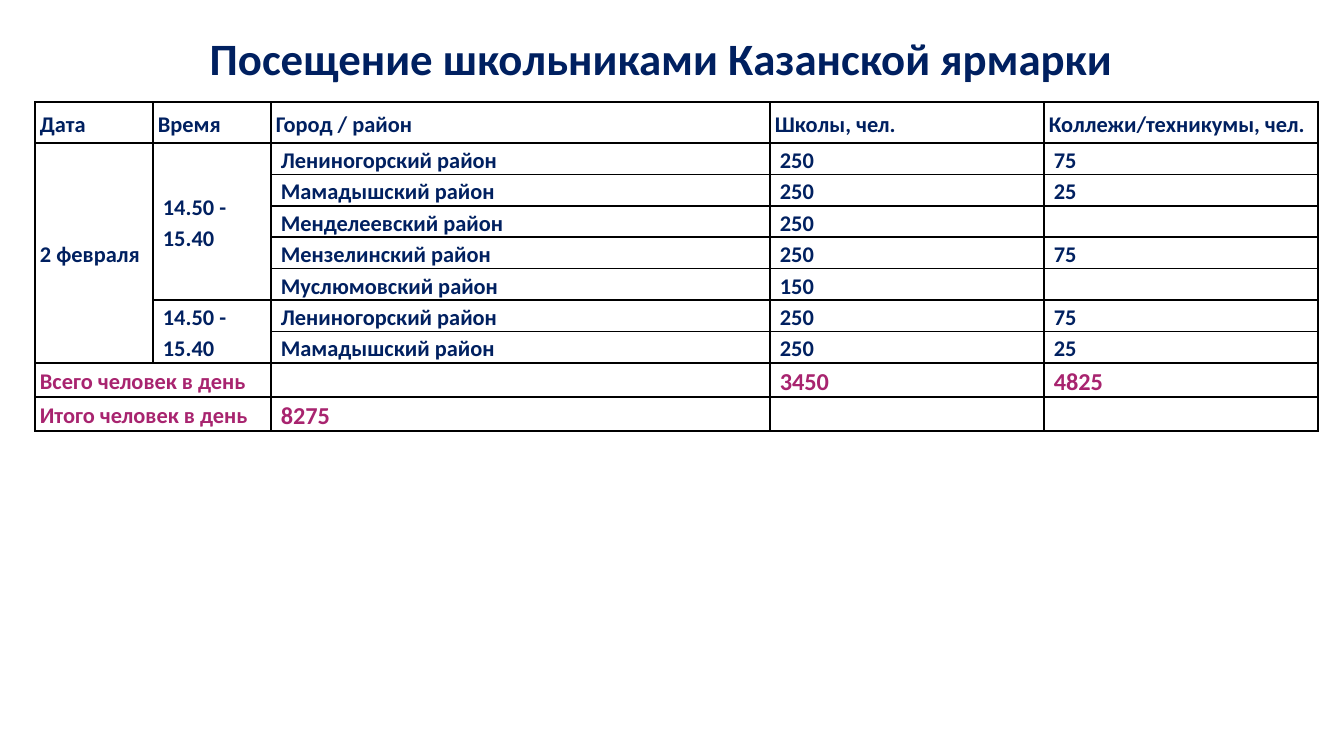
"""Builds the slide with the school visit schedule of the Kazan fair."""
from dataclasses import dataclass

from lxml.etree import SubElement
from pptx import Presentation
from pptx.dml.color import RGBColor
from pptx.enum.text import MSO_ANCHOR, MSO_AUTO_SIZE, PP_ALIGN
from pptx.oxml.ns import qn
from pptx.util import Emu, Pt


@dataclass(frozen=True)
class Theme:
    font: str = "Calibri"
    navy: str = "002060"
    magenta: str = "A8246F"
    white: str = "FFFFFF"
    border: str = "000000"
    title_size: int = 24
    body_size: int = 12
    total_size: int = 13


THEME = Theme()
COLUMNS = [118, 118, 499, 274, 274]
ROW_HEIGHTS = [41] + [31] * 7 + [34] * 2
HEADER = ["Дата", "Время", "Город / район", "Школы, чел.", "Коллежи/техникумы, чел."]
DATE = "2 февраля"
SESSIONS = [
    ("14.50 - 15.40", [
        ("Лениногорский район", "250", "75"),
        ("Мамадышский район", "250", "25"),
        ("Менделеевский район", "250", ""),
        ("Мензелинский район", "250", "75"),
        ("Муслюмовский район", "150", ""),
    ]),
    ("14.50 - 15.40", [
        ("Лениногорский район", "250", "75"),
        ("Мамадышский район", "250", "25"),
    ]),
]
TOTALS = [
    ["Всего человек в день", "", "", "3450", "4825"],
    ["Итого человек в день", "", "8275", "", ""],
]


def px(length):
    return Emu(round(length * 914400 / 134.4))


def style_paragraph(para, size, color, spacing):
    font = para.font
    font.name, font.size, font.bold = THEME.font, Pt(size), True
    font.color.rgb = RGBColor.from_string(color)
    para.line_spacing = spacing


def set_margins(target, side, vertical):
    target.margin_left = target.margin_right = px(side)
    target.margin_top = target.margin_bottom = px(vertical)


def add_title(page, text):
    title = page.shapes.title
    title.left, title.top, title.width, title.height = map(px, (56, 19, 1210, 83))
    frame = title.text_frame
    frame.text = text
    frame.word_wrap = True
    frame.auto_size = MSO_AUTO_SIZE.NONE
    frame.vertical_anchor = MSO_ANCHOR.MIDDLE
    set_margins(frame, 10, 5)
    para = frame.paragraphs[0]
    para.alignment = PP_ALIGN.CENTER
    style_paragraph(para, THEME.title_size, THEME.navy, 0.9)


def add_borders(cell):
    properties = cell._tc.get_or_add_tcPr()
    for side in ("L", "R", "T", "B"):
        line = SubElement(properties, qn(f"a:ln{side}"), w=str(Pt(1)))
        fill = SubElement(line, qn("a:solidFill"))
        SubElement(fill, qn("a:srgbClr"), val=THEME.border)


def format_cell(cell, text, size, color, margin):
    cell.text = text
    cell.vertical_anchor = MSO_ANCHOR.MIDDLE
    set_margins(cell, margin, 0)
    para = cell.text_frame.paragraphs[0]
    style_paragraph(para, size, color, 1.15)
    if not text:
        SubElement(para._p, qn("a:endParaRPr"), sz=str(size * 100))
    add_borders(cell)
    cell.fill.solid()
    cell.fill.fore_color.rgb = RGBColor.from_string(THEME.white)


def schedule_rows():
    rows = [HEADER]
    for time, visits in SESSIONS:
        for number, visit in enumerate(visits):
            date = DATE if len(rows) == 1 else ""
            rows.append([date, "" if number else time, *visit])
    return rows


def add_schedule(page):
    visits = schedule_rows()
    rows = visits + TOTALS
    frame = page.shapes.add_table(len(rows), len(COLUMNS), px(35), px(102),
                                  px(sum(COLUMNS)), px(sum(ROW_HEIGHTS)))
    table = frame.table
    table.first_row = table.horz_banding = False
    for column, width in zip(table.columns, COLUMNS):
        column.width = px(width)
    for row, height in zip(table.rows, ROW_HEIGHTS):
        row.height = px(height)
    for r, texts in enumerate(rows):
        is_total = r >= len(visits)
        color = THEME.magenta if is_total else THEME.navy
        for c, text in enumerate(texts):
            size = THEME.total_size if is_total and c > 1 else THEME.body_size
            margin = 5 if r == 0 or c == 0 else 10
            format_cell(table.cell(r, c), text, size, color, margin)
    merge_cells(table, len(visits))


def merge_cells(table, total_start):
    table.cell(1, 0).merge(table.cell(total_start - 1, 0))
    start = 1
    for _, visits in SESSIONS:
        end = start + len(visits)
        table.cell(start, 1).merge(table.cell(end - 1, 1))
        start = end
    for r in range(total_start, total_start + len(TOTALS)):
        table.cell(r, 0).merge(table.cell(r, 1))


def main():
    deck = Presentation()
    deck.slide_width, deck.slide_height = px(1344), px(756)
    page = deck.slides.add_slide(deck.slide_layouts[5])
    add_title(page, "Посещение школьниками Казанской ярмарки")
    add_schedule(page)
    deck.save("out.pptx")


if __name__ == "__main__":
    main()
